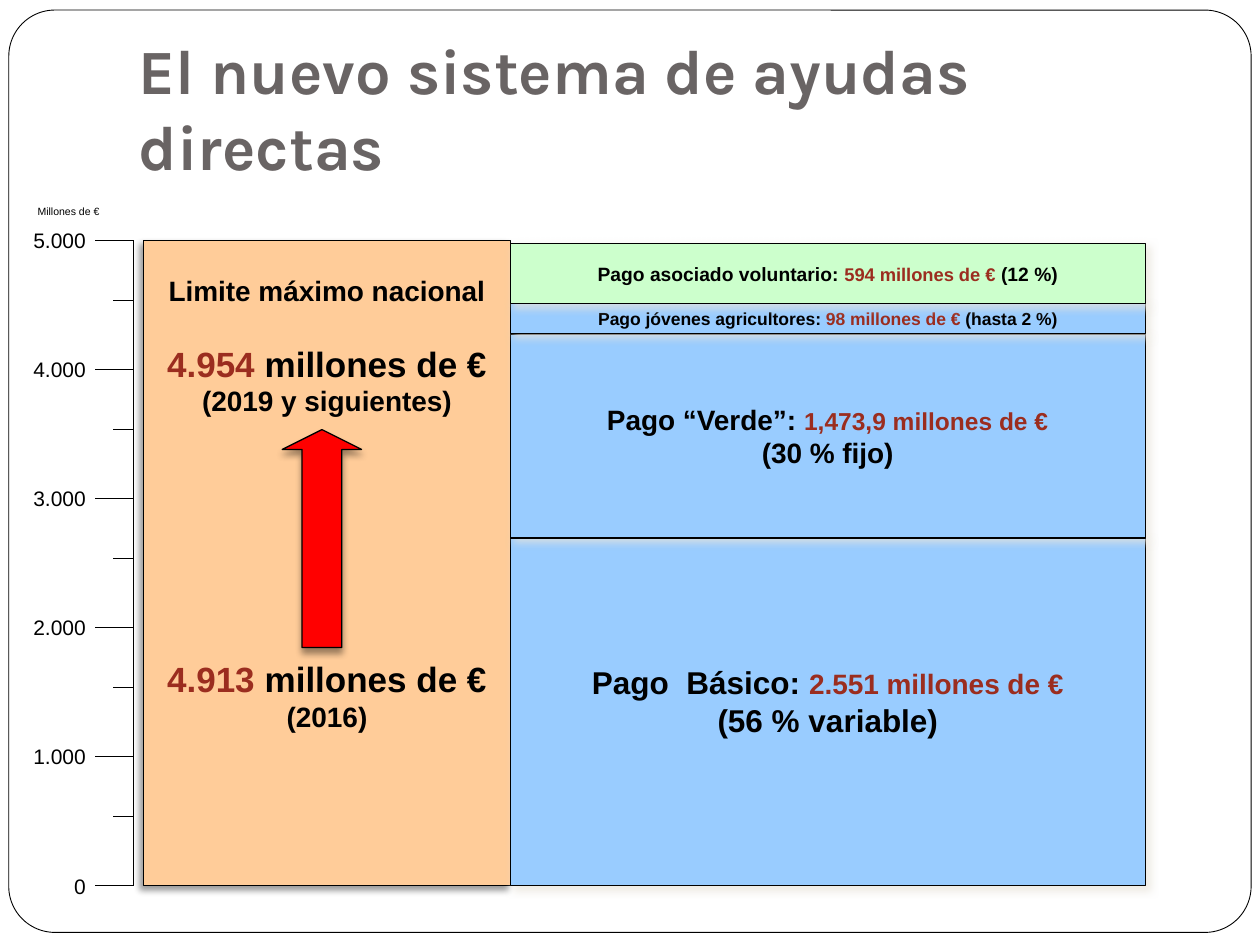
from pptx import Presentation
from pptx.dml.color import RGBColor
from pptx.enum.shapes import MSO_CONNECTOR, MSO_SHAPE as Shape
from pptx.enum.text import MSO_ANCHOR as Anchor, MSO_AUTO_SIZE, PP_ALIGN as Align
from pptx.oxml.xmlchemy import OxmlElement
from pptx.util import Inches, Pt

COLORS = {
    "black": "000000", "white": "FFFFFF", "title": "696464", "amount": "9B2D1F",
    "orange": "FFCC99", "blue": "99CCFF", "green": "CCFFCC", "red": "FF0000",
    "beige": "E9E5DC",
}
# Shadows: colour, opacity %, blur pt, distance pt, direction in degrees
PANEL_SHADOW = ("black", 40, 4, 3, 135)
ARROW_SHADOW = ("black", 40, 4, 3, 90)
BLOCK_SHADOW = ("beige", 75, 5, 3, 45)

AXIS_X, AXIS_TOP, AXIS_BOTTOM = 1.06, 1.91, 7.03
LABELS = ["0", "1.000", "2.000", "3.000", "4.000", "5.000"]
MINOR_OFFSET = 0.55

BLOCK_LEFT, BLOCK_WIDTH = 4.05, 5.04
# From the bottom up: height, fill, bottom inset, lines of (text, size, colour)
BLOCKS = [
    (2.76, "blue", 0.22, [
        [("Pago  Básico: ", 18, "black"), ("2.551 millones de €", 16, "amount")],
        [("(56 % variable)", 18, "black")]]),
    (1.62, "blue", 0.05, [
        [("Pago “Verde”: ", 16, "black"), ("1,473,9 millones de €", 14, "amount")],
        [("(30 % fijo)", 16, "black")]]),
    (0.24, "blue", 0.05, [
        [("Pago jóvenes agricultores: ", 10, "black"), ("98 millones de €", 10, "amount"),
         (" (hasta 2 %)", 10, "black")]]),
    (0.48, "green", 0.05, [
        [("Pago asociado voluntario: ", 11, "black"), ("594 millones de €", 10.5, "amount"),
         (" (12 %)", 11, "black")]]),
]
LIMIT_LINES = [
    [("Limite máximo nacional", 16, "black")],
    [("4.954 ", 20, "amount"), ("millones de €", 20, "black")],
    [("(2019 y siguientes)", 16, "black")],
    [("4.913 ", 20, "amount"), ("millones de €", 20, "black")],
    [("(2016)", 16, "black")],
]
LIMIT_GAPS = [0, 20, 0, 137, 0]


def rgb(name):
    return RGBColor.from_string(COLORS[name])


class SlideBuilder:
    font = "Arial"
    line_width = 0.75

    def __init__(self, slide):
        self.slide = slide

    def format_font(self, font, size, color, bold=False, name=None):
        for key, value in {"name": name or self.font, "size": Pt(size), "bold": bold}.items():
            setattr(font, key, value)
        font.color.rgb = rgb(color)

    def format_frame(self, frame, **values):
        defaults = {"word_wrap": True, "auto_size": MSO_AUTO_SIZE.NONE}
        for key, value in (defaults | values).items():
            setattr(frame, key, value)

    def add_effects(self, shape, shadow=None):
        """Give the shape its own effect list, empty unless a shadow is named."""
        effects = OxmlElement("a:effectLst")
        shape._element.spPr.append(effects)
        if shadow:
            color, opacity, blur, distance, direction = shadow
            outer = OxmlElement("a:outerShdw")
            for key, value in {"blurRad": Pt(blur), "dist": Pt(distance),
                               "dir": direction * 60000, "rotWithShape": 0}.items():
                outer.set(key, str(int(value)))
            tint = OxmlElement("a:srgbClr")
            tint.set("val", COLORS[color])
            alpha = OxmlElement("a:alpha")
            alpha.set("val", str(opacity * 1000))
            tint.append(alpha)
            outer.append(tint)
            effects.append(outer)

    def title(self, text, box):
        title = self.slide.shapes.title
        for key, value in zip(("left", "top", "width", "height"), box):
            setattr(title, key, Inches(value))
        self.format_frame(title.text_frame, vertical_anchor=Anchor.BOTTOM,
                          margin_bottom=Inches(0.1))
        paragraph = title.text_frame.paragraphs[0]
        paragraph.alignment = Align.LEFT
        run = paragraph.add_run()
        run.text = text
        self.format_font(run.font, 36, "title", True, "Karla")

    def shape(self, kind, box, fill=None, shadow=None, adjustments=(), width=None):
        shape = self.slide.shapes.add_shape(kind, *map(Inches, box))
        for index, value in enumerate(adjustments):
            shape.adjustments[index] = value
        if fill:
            shape.fill.solid()
            shape.fill.fore_color.rgb = rgb(fill)
        else:
            shape.fill.background()
        shape.line.color.rgb = rgb("black")
        shape.line.width = Pt(width or self.line_width)
        self.add_effects(shape, shadow)
        return shape

    def panel(self, box, fill, shadow, lines, gaps=None, **frame_values):
        """Rectangle with bold centred lines of coloured runs."""
        frame = self.shape(Shape.RECTANGLE, box, fill, shadow).text_frame
        self.format_frame(frame, **frame_values)
        for index, line in enumerate(lines):
            paragraph = frame.add_paragraph() if index else frame.paragraphs[0]
            paragraph.alignment = Align.CENTER
            if gaps:
                paragraph.space_before = Pt(gaps[index])
            for text, size, color in line:
                run = paragraph.add_run()
                run.text = text
                self.format_font(run.font, size, color, True)

    def line(self, start, end):
        line = self.slide.shapes.add_connector(
            MSO_CONNECTOR.STRAIGHT, *map(Inches, (*start, *end)))
        line.line.color.rgb = rgb("black")
        line.line.width = Pt(self.line_width)
        self.add_effects(line)

    def label(self, text, box, size, align):
        frame = self.slide.shapes.add_textbox(*map(Inches, box)).text_frame
        self.format_frame(frame)
        paragraph = frame.paragraphs[0]
        paragraph.alignment = align
        run = paragraph.add_run()
        run.text = text
        self.format_font(run.font, size, "black")

    def axis(self):
        step = (AXIS_BOTTOM - AXIS_TOP) / (len(LABELS) - 1)
        self.line((AXIS_X, AXIS_BOTTOM), (AXIS_X, AXIS_TOP))
        for index, text in enumerate(LABELS):
            y = AXIS_BOTTOM - index * step
            self.line((AXIS_X, y), (0.75, y))
            self.label(text, (0.03, y - 0.15, 0.75, 0.3), 12, Align.RIGHT)
            if index < len(LABELS) - 1:
                self.line((AXIS_X, y - MINOR_OFFSET), (0.9, y - MINOR_OFFSET))
        self.label("Millones de €", (0.2, 1.58, 1.26, 0.2), 6, Align.LEFT)


def main():
    presentation = Presentation()
    presentation.slide_width = Inches(10)
    presentation.slide_height = Inches(7.5)
    builder = SlideBuilder(presentation.slides.add_slide(presentation.slide_layouts[5]))

    builder.shape(Shape.ROUNDED_RECTANGLE, (0.07, 0.08, 9.86, 7.32),
                  adjustments=[0.05], width=0.5)
    builder.title("El nuevo sistema de ayudas directas", (1, 0.3, 8.5, 1.25))
    builder.panel((1.14, AXIS_TOP, 2.91, AXIS_BOTTOM - AXIS_TOP), "orange", PANEL_SHADOW,
                  LIMIT_LINES, LIMIT_GAPS, vertical_anchor=Anchor.TOP,
                  margin_top=Inches(0.26))

    top = AXIS_BOTTOM
    for height, fill, inset, lines in BLOCKS:
        top -= height
        builder.panel((BLOCK_LEFT, top, BLOCK_WIDTH, height), fill, BLOCK_SHADOW, lines,
                      vertical_anchor=Anchor.MIDDLE, margin_bottom=Inches(inset))

    builder.shape(Shape.UP_ARROW, (2.24, 3.41, 0.63, 1.73), "red", ARROW_SHADOW, [0.5, 0.25])
    builder.axis()
    presentation.save("out.pptx")


if __name__ == "__main__":
    main()
